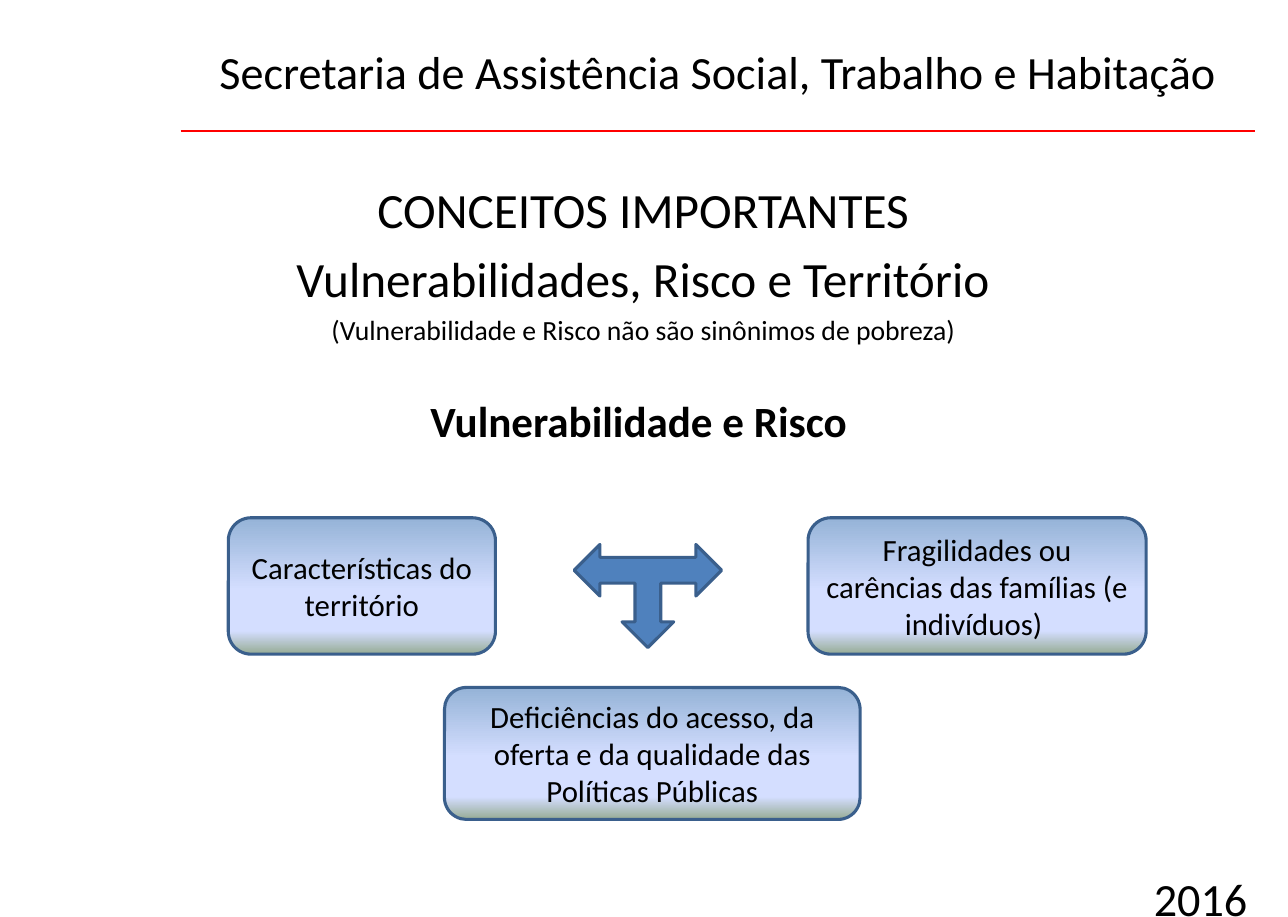
import lxml.etree
import pptx
import pptx.dml.color
import pptx.enum.shapes
import pptx.enum.text
import pptx.oxml.ns
import pptx.util

Inches = pptx.util.Inches
Pt = pptx.util.Pt
SHAPES = pptx.enum.shapes.MSO_SHAPE
ALIGN = pptx.enum.text.PP_ALIGN
ANCHOR = pptx.enum.text.MSO_ANCHOR
qn = pptx.oxml.ns.qn

COLOURS = {
    "text": "000000",
    "rule": "FF0000",
    "arrow": "4F81BD",
    "outline": "3A5F8C",
    "card_top": "95B3D7",
    "card_middle": "D4DEFF",
    "card_bottom": "96AB94",
}
CARD_STOPS = [(0, "card_top"), (53, "card_middle"), (83, "card_middle"), (100, "card_bottom")]


def rgb(name):
    """Return the palette colour with this name."""
    return pptx.dml.color.RGBColor.from_string(COLOURS[name])


def write(paragraph, text, size=20, bold=False, align=ALIGN.CENTER, before=0):
    """Put formatted text into a paragraph."""
    paragraph.alignment = align
    if before:
        paragraph.space_before = Pt(before)
    run = paragraph.add_run()
    run.text = text
    run.font.name = "Calibri"
    run.font.size = Pt(size)
    run.font.bold = bold
    run.font.color.rgb = rgb("text")


def add_text_frame(slide, box):
    """Add a wrapping text box and return its frame."""
    frame = slide.shapes.add_textbox(*map(Inches, box)).text_frame
    frame.word_wrap = True
    frame.margin_left = frame.margin_right = Inches(0.11)
    frame.margin_top = frame.margin_bottom = Inches(0.06)
    return frame


def add_outlined_shape(slide, kind, box):
    """Add a preset shape with the common outline."""
    shape = slide.shapes.add_shape(kind, *map(Inches, box))
    shape.shadow.inherit = False
    shape.line.color.rgb = rgb("outline")
    shape.line.width = Pt(2)
    return shape


def fill_with_gradient(shape):
    """Fill a shape from top to bottom with the card colours."""
    shape.fill.gradient()
    shape.fill.gradient_angle = 270
    stops = shape._element.spPr.find(qn("a:gradFill")).find(qn("a:gsLst"))
    for stop in list(stops):
        stops.remove(stop)
    for percent, name in CARD_STOPS:
        stop = lxml.etree.SubElement(stops, qn("a:gs"), pos=str(percent * 1000))
        lxml.etree.SubElement(stop, qn("a:srgbClr"), val=COLOURS[name])


def add_card(slide, box, text):
    """Add a rounded card with centred text."""
    card = add_outlined_shape(slide, SHAPES.ROUNDED_RECTANGLE, box)
    fill_with_gradient(card)
    card.text_frame.word_wrap = True
    card.text_frame.vertical_anchor = ANCHOR.MIDDLE
    write(card.text_frame.paragraphs[0], text)


def add_header(slide, box):
    """Add the department name with a red rule below it."""
    left, top, width, height = box
    name = add_text_frame(slide, (left + 0.24, top, width - 0.27, 0.62))
    write(name.paragraphs[0], "Secretaria de Assistência Social, Trabalho e Habitação",
          size=30, align=ALIGN.LEFT)
    bottom = Inches(top + height)
    rule = slide.shapes.add_connector(pptx.enum.shapes.MSO_CONNECTOR.STRAIGHT,
                                      Inches(left), bottom, Inches(left + width), bottom)
    rule.line.color.rgb = rgb("rule")
    rule.line.width = Pt(1.5)
    lxml.etree.SubElement(rule._element.spPr, qn("a:effectLst"))


def add_concepts(slide, box):
    """Add the centred headings."""
    frame = add_text_frame(slide, box)
    headings = [
        ("CONCEITOS IMPORTANTES", dict(size=32)),
        ("Vulnerabilidades, Risco e Território", dict(size=32, before=6.4)),
        ("(Vulnerabilidade e Risco não são sinônimos de pobreza)", dict(size=18, before=3.6)),
        ("Vulnerabilidade e Risco ", dict(size=28, bold=True, before=31)),
    ]
    for index, (text, style) in enumerate(headings):
        paragraph = frame.add_paragraph() if index else frame.paragraphs[0]
        write(paragraph, text, **style)


def add_diagram(slide, box):
    """Add three cards around a three-way arrow."""
    left, top, width, height = box
    arrow = add_outlined_shape(slide, SHAPES.LEFT_RIGHT_UP_ARROW,
                               (left + 3.12, top + 0.24, 1.33, 0.93))
    arrow.rotation = 180
    arrow.fill.solid()
    arrow.fill.fore_color.rgb = rgb("arrow")
    add_card(slide, (left, top, 2.41, 1.23), "Características do território")
    add_card(slide, (left + width - 3.05, top, 3.05, 1.23),
             "Fragilidades ou carências das famílias (e indivíduos) ")
    add_card(slide, (left + 1.95, top + height - 1.19, 3.75, 1.19),
             "Deficiências do acesso, da oferta e da qualidade das Políticas Públicas")


def add_year(slide, box):
    """Add the year at the bottom right."""
    write(add_text_frame(slide, box).paragraphs[0], "2016", size=30, align=ALIGN.LEFT)


def main():
    """Build and save the slide."""
    deck = pptx.Presentation()
    deck.slide_width = Inches(11.62)
    deck.slide_height = Inches(8.27)
    slide = deck.slides.add_slide(deck.slide_layouts[6])
    add_header(slide, (1.63, 0.33, 9.69, 0.85))
    add_year(slide, (10.3, 7.79, 3.07, 0.62))
    add_concepts(slide, (0.58, 1.56, 10.45, 5.83))
    add_diagram(slide, (2.06, 4.67, 8.28, 2.72))
    deck.save("out.pptx")


if __name__ == "__main__":
    main()
